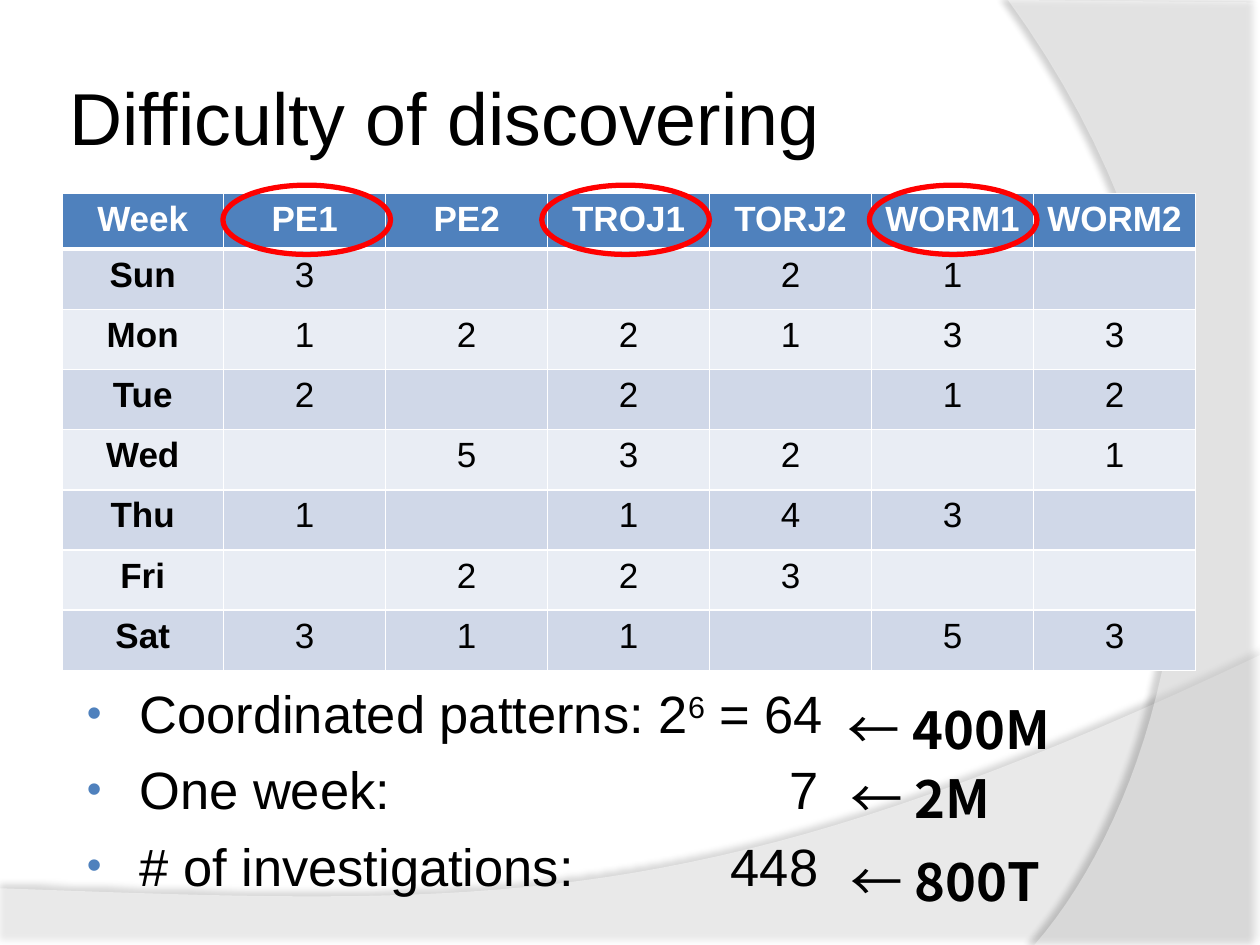
from lxml import etree
from pptx import Presentation
from pptx.dml.color import RGBColor
from pptx.enum.shapes import MSO_SHAPE as Shape
from pptx.enum.text import MSO_ANCHOR as Anchor, PP_ALIGN as Align
from pptx.oxml import parse_xml
from pptx.oxml.ns import nsdecls, qn
from pptx.util import Pt

color = RGBColor.from_string


def style(run, size, font="Arial", ink="000000", bold=False):
    run.font.size = Pt(size)
    run.font.name = font
    run.font.bold = bold
    run.font.color.rgb = color(ink)
    etree.SubElement(run.font._element, qn("a:ea"), typeface=font)


def add_frame(left, top, width, height):
    frame = slide.shapes.add_textbox(Pt(left), Pt(top), Pt(width), Pt(height)).text_frame
    frame.word_wrap = True
    return frame


prs = Presentation()
prs.slide_width, prs.slide_height = Pt(720), Pt(540)
slide = prs.slides.add_slide(prs.slide_layouts[6])

swooshes = [
    ([(0, 507.6), (0, 540), (720, 540)],
     [(720, 374.4), (402.5, 524.9), (281.5, 517.7), (0, 507.6)], 45, 35, 3.5, 270),
    ([(720, 1.4), (720, 540)],
     [(591.1, 540), (673.2, 445.7), (733, 216), (576, 0)], 40, 45, 4, 180),
]
for corners, curve, opacity, shade, distance, angle in swooshes:
    outline = list(corners)
    for step in range(41):
        t = step / 40
        weights = [(1 - t) ** 3, 3 * t * (1 - t) ** 2, 3 * t ** 2 * (1 - t), t ** 3]
        outline.append(tuple(sum(w * point[axis] for w, point in zip(weights, curve))
                             for axis in (0, 1)))
    points = [(Pt(x), Pt(y)) for x, y in outline]
    builder = slide.shapes.build_freeform(*points[0])
    builder.add_line_segments(points[1:])
    swoosh = builder.convert_to_shape()
    swoosh.fill.solid()
    swoosh.fill.fore_color.rgb = color("FFFFFF")
    swoosh.line.fill.background()
    swoosh.shadow.inherit = False
    properties = swoosh._element.spPr
    white = properties.find(qn("a:solidFill"))[0]
    etree.SubElement(white, qn("a:alpha"), val=str(opacity * 1000))
    properties.find(qn("a:effectLst")).append(parse_xml(
        f'<a:outerShdw {nsdecls("a")} blurRad="{Pt(4)}" dist="{Pt(distance)}" '
        f'dir="{angle * 60000}" algn="ctr" rotWithShape="0">'
        f'<a:srgbClr val="000000"><a:alpha val="{shade * 1000}"/></a:srgbClr></a:outerShdw>'))

title = add_frame(36, 21.6, 588, 90)
title.vertical_anchor = Anchor.MIDDLE
title.margin_left = title.margin_right = Pt(3.6)
title.text = "Difficulty of discovering"
style(title.paragraphs[0].runs[0], 42)

findings = add_frame(39.6, 385.8, 584, 126)
findings.text = "Coordinated patterns: 2\nOne week:\t7\n# of investigations:\t448"
exponent = findings.paragraphs[0].add_run()
exponent.text = "6"
findings.paragraphs[0].add_run().text = " = 64"
for index, paragraph in enumerate(findings.paragraphs):
    paragraph.space_before = Pt(7.5 if index else 0)
    layout = paragraph._p.get_or_add_pPr()
    layout.set("marL", str(Pt(33)))
    layout.set("indent", str(Pt(-30)))
    for part in (
        '<a:buClr {}><a:srgbClr val="4F81BD"/></a:buClr>',
        '<a:buSzPct {} val="80000"/>',
        '<a:buFont {} typeface="Arial"/>',
        '<a:buChar {} char="•"/>',
        f'<a:tabLst {{}}><a:tab pos="{Pt(421)}" algn="r"/></a:tabLst>',
    ):
        layout.append(parse_xml(part.format(nsdecls("a"))))
    for run in paragraph.runs:
        style(run, 30)
exponent.font._element.set("baseline", "30000")

weeks = [
    ["Week", "PE1", "PE2", "TROJ1", "TORJ2", "WORM1", "WORM2"],
    ["Sun", "3", "", "", "2", "1", ""],
    ["Mon", "1", "2", "2", "1", "3", "3"],
    ["Tue", "2", "", "2", "", "1", "2"],
    ["Wed", "", "5", "3", "2", "", "1"],
    ["Thu", "1", "", "1", "4", "3", ""],
    ["Fri", "", "2", "2", "3", "", ""],
    ["Sat", "3", "1", "1", "", "5", "3"],
]
table = slide.shapes.add_table(8, 7, Pt(35.3), Pt(110.5), Pt(648), Pt(273)).table
for column in table.columns:
    column.width = Pt(648 / 7)
for r, week in enumerate(weeks):
    table.rows[r].height = Pt(34.4 if r else 31.9)
    for c, value in enumerate(week):
        cell = table.cell(r, c)
        borders = {"L": 1, "R": 1, "T": 3 if r == 1 else 1, "B": 1 if r else 3}
        for side, width in borders.items():
            cell._tc.get_or_add_tcPr().append(parse_xml(
                f'<a:ln{side} {nsdecls("a")} w="{Pt(width)}"><a:solidFill>'
                f'<a:srgbClr val="FFFFFF"/></a:solidFill></a:ln{side}>'))
        cell.fill.solid()
        cell.fill.fore_color.rgb = color("4F81BD" if r == 0 else "D0D8E8" if r % 2 else "E9EDF4")
        paragraph = cell.text_frame.paragraphs[0]
        paragraph.alignment = Align.CENTER
        paragraph.font.size = Pt(20)
        if value:
            paragraph.text = value
            style(paragraph.runs[0], 20, ink="000000" if r else "FFFFFF", bold=r == 0 or c == 0)

for left, top, amount in [(478.8, 481.7, "800T"), (478.8, 434.2, "2M"), (477.4, 394.6, "400M")]:
    estimate = add_frame(left, top, 240, 43.2).paragraphs[0]
    estimate.text = "← "
    estimate.add_run().text = amount
    for run, bold in zip(estimate.runs, (False, True)):
        style(run, 30, "Noto Sans CJK JP", bold=bold)

for left in (496.8, 309.6, 127.4):
    ring = slide.shapes.add_shape(Shape.OVAL, Pt(left), Pt(105.8), Pt(95.8), Pt(39.6))
    ring.fill.background()
    ring.line.color.rgb = color("FF0000")
    ring.line.width = Pt(3)
    ring.shadow.inherit = False

prs.save("out.pptx")
